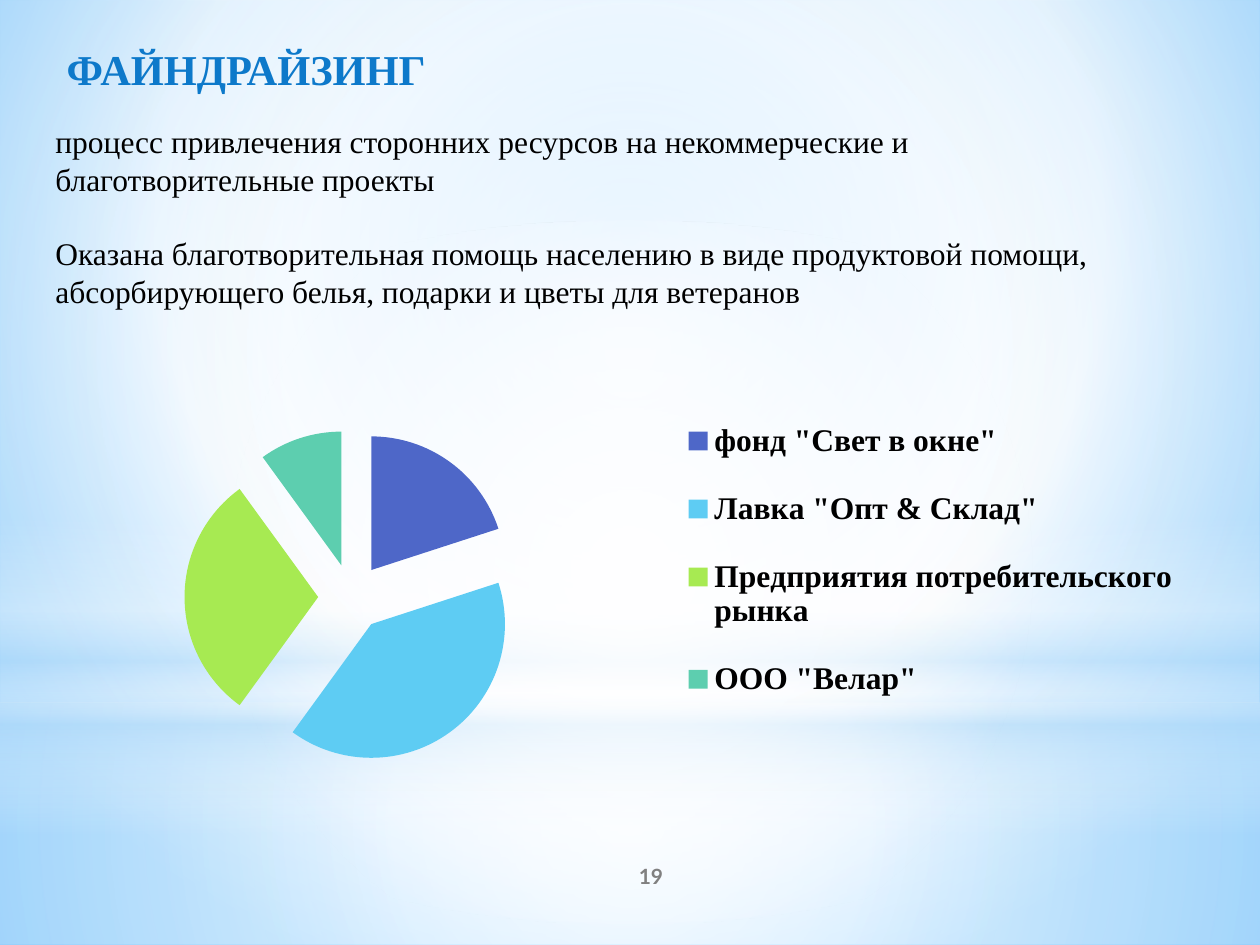
from dataclasses import dataclass
from typing import Optional

from lxml.etree import SubElement
from pptx import Presentation
from pptx.chart.data import CategoryChartData
from pptx.dml.color import RGBColor
from pptx.enum.chart import XL_CHART_TYPE, XL_LEGEND_POSITION
from pptx.enum.shapes import MSO_SHAPE
from pptx.enum.text import MSO_ANCHOR, MSO_AUTO_SIZE, PP_ALIGN
from pptx.oxml.ns import qn
from pptx.util import Pt

EMU_PER_PX = 914400 / 126
SERIF = "Times New Roman"
SANS = "Lato"


@dataclass(frozen=True)
class Box:
    left: int
    top: int
    width: int
    height: int

    def emu(self) -> list[int]:
        return [px(self.left), px(self.top), px(self.width), px(self.height)]


@dataclass(frozen=True)
class Stop:
    position: int
    color: str
    opacity: int = 100


@dataclass(frozen=True)
class Gradient:
    stops: list[Stop]
    focus: tuple[int, int, int, int] = (50, 50, 50, 50)
    angle: Optional[int] = None


@dataclass(frozen=True)
class Glow:
    kind: MSO_SHAPE
    box: Box
    gradient: Gradient


@dataclass(frozen=True)
class TextStyle:
    font: str
    size: float
    color: str
    bold: bool = False
    align: PP_ALIGN = PP_ALIGN.LEFT
    anchor: MSO_ANCHOR = MSO_ANCHOR.TOP
    gap: float = 0


@dataclass(frozen=True)
class Donor:
    name: str
    share: int
    color: str


SLIDE = Box(0, 0, 1260, 945)
CHART = Box(54, 319, 1134, 461)
PLOT = Box(73, 430, 557, 334)
LEGEND = Box(675, 390, 510, 340)
BACKGROUND = Gradient(
    [Stop(0, "9ED5FF"), Stop(60, "FFFFFF"), Stop(100, "5BB9FF")], (20, 10, 20, 60))
GLOWS = [
    Glow(MSO_SHAPE.RECTANGLE, Box(0, 703, 1260, 242), Gradient(
        [Stop(0, "FFFFFF", 91), Stop(37, "FFFFFF", 76), Stop(100, "B4DCFA", 79)])),
    Glow(MSO_SHAPE.RECTANGLE, Box(0, 0, 1260, 703), Gradient(
        [Stop(0, "FFFFFF", 89), Stop(48, "FFFFFF", 62), Stop(100, "B4DCFA", 79)])),
    Glow(MSO_SHAPE.RECTANGLE, Box(0, 519, 1260, 315), Gradient(
        [Stop(0, "FFFFFF", 0), Stop(29, "FFFFFF", 30), Stop(45, "B4DCFA", 40),
         Stop(55, "FFFFFF", 26), Stop(65, "B4DCFA", 60), Stop(100, "FFFFFF", 0)],
        angle=90)),
    Glow(MSO_SHAPE.OVAL, Box(0, 221, 1260, 703), Gradient(
        [Stop(0, "FFFFFF"), Stop(56, "FFFFFF", 0)])),
]
DONORS = [
    Donor('фонд "Свет в окне"', 20, "4E67C8"),
    Donor('Лавка "Опт & Склад"', 40, "5ECCF3"),
    Donor("Предприятия потребительского рынка", 30, "A7EA52"),
    Donor('ООО "Велар"', 10, "5DCEAF"),
]
BODY = [
    "процесс привлечения сторонних ресурсов на некоммерческие и "
    "благотворительные проекты",
    "Оказана благотворительная помощь населению в виде продуктовой помощи, "
    "абсорбирующего белья, подарки и цветы для ветеранов",
]


def px(length: int) -> int:
    """Turn pixels into EMU."""
    return round(length * EMU_PER_PX)


def rgb(color: str) -> RGBColor:
    """Turn a hex string into a colour."""
    return RGBColor.from_string(color)


def set_gradient(fill, properties, gradient: Gradient) -> None:
    """Give the owner of the properties element a gradient fill."""
    fill.solid()
    solid = properties.find(qn("a:solidFill"))
    element = solid.makeelement(qn("a:gradFill"), {"rotWithShape": "1"})
    stop_list = SubElement(element, qn("a:gsLst"))
    for stop in gradient.stops:
        item = SubElement(stop_list, qn("a:gs"), pos=str(stop.position * 1000))
        color = SubElement(item, qn("a:srgbClr"), val=stop.color)
        if stop.opacity < 100:
            SubElement(color, qn("a:alpha"), val=str(stop.opacity * 1000))
    if gradient.angle is not None:
        SubElement(element, qn("a:lin"), ang=str(gradient.angle * 60000), scaled="0")
    else:
        circle = SubElement(element, qn("a:path"), {"path": "circle"})
        sides = {side: str(value * 1000) for side, value in zip("ltrb", gradient.focus)}
        SubElement(circle, qn("a:fillToRect"), sides)
    properties.replace(solid, element)


def draw_glow(slide, glow: Glow) -> None:
    """Draw one soft shape of the backdrop."""
    shape = slide.shapes.add_shape(glow.kind, *glow.box.emu())
    shape.shadow.inherit = False
    shape.line.fill.background()
    set_gradient(shape.fill, shape.element.find(qn("p:spPr")), glow.gradient)


def write_text(shape, texts: list[str], style: TextStyle) -> None:
    """Fill a shape with one paragraph for each text."""
    frame = shape.text_frame
    frame.word_wrap = True
    frame.auto_size = MSO_AUTO_SIZE.NONE
    frame.vertical_anchor = style.anchor
    for index, text in enumerate(texts):
        paragraph = frame.add_paragraph() if index else frame.paragraphs[0]
        paragraph.alignment = style.align
        paragraph.space_before = Pt(style.gap if index else 0)
        run = paragraph.add_run()
        run.text = text
        run.font.name = style.font
        run.font.size = Pt(style.size)
        run.font.bold = style.bold
        run.font.color.rgb = rgb(style.color)


def set_layout(parent, index: int, box: Box, inner: bool = False) -> None:
    """Place a chart part at a fixed box inside the chart."""
    for old in parent.findall(qn("c:layout")):
        parent.remove(old)
    layout = parent.makeelement(qn("c:layout"), {})
    parent.insert(index, layout)
    manual = SubElement(layout, qn("c:manualLayout"))
    if inner:
        SubElement(manual, qn("c:layoutTarget"), val="inner")
    for mode in ("xMode", "yMode"):
        SubElement(manual, qn(f"c:{mode}"), val="edge")
    fractions = {
        "x": (box.left - CHART.left) / CHART.width,
        "y": (box.top - CHART.top) / CHART.height,
        "w": box.width / CHART.width,
        "h": box.height / CHART.height,
    }
    for name, value in fractions.items():
        SubElement(manual, qn(f"c:{name}"), val=f"{value:.3f}")


def draw_chart(slide, donors: list[Donor]) -> None:
    """Draw the exploded pie of donor shares."""
    data = CategoryChartData()
    data.categories = [donor.name for donor in donors]
    data.add_series("Series 1", [donor.share for donor in donors])
    chart = slide.shapes.add_chart(XL_CHART_TYPE.PIE_EXPLODED, *CHART.emu(), data).chart
    chart.has_title = False
    chart.font.name = SANS
    chart.font.size = Pt(18)
    chart.font.color.rgb = rgb("000000")
    plot = chart.plots[0]
    plot.vary_by_categories = True
    for index, donor in enumerate(donors):
        fill = plot.series[0].points[index].format.fill
        fill.solid()
        fill.fore_color.rgb = rgb(donor.color)
    chart.has_legend = True
    legend = chart.legend
    legend.position = XL_LEGEND_POSITION.RIGHT
    legend.include_in_layout = False
    legend.font.name = SERIF
    legend.font.size = Pt(18)
    legend.font.bold = True
    legend.font.color.rgb = rgb("000000")
    root = chart.element
    set_layout(root.find(".//" + qn("c:plotArea")), 0, PLOT, inner=True)
    set_layout(root.find(".//" + qn("c:legend")), 1, LEGEND)


def main() -> None:
    """Build the slide and save it."""
    presentation = Presentation()
    presentation.slide_width, presentation.slide_height = SLIDE.emu()[2:]
    slide = presentation.slides.add_slide(presentation.slide_layouts[5])
    fill = slide.background.fill
    fill.solid()
    set_gradient(fill, slide.element.find(".//" + qn("p:bgPr")), BACKGROUND)
    for glow in GLOWS:
        draw_glow(slide, glow)
    number = slide.shapes.add_textbox(*Box(525, 851, 252, 50).emu())
    write_text(number, ["19"], TextStyle(
        SANS, 12, "808080", True, PP_ALIGN.CENTER, MSO_ANCHOR.MIDDLE))
    title = slide.shapes.title
    title.left, title.top, title.width, title.height = Box(54, 37, 1032, 79).emu()
    title.element.getparent().append(title.element)
    write_text(title, ["ФАЙНДРАЙЗИНГ"], TextStyle(SERIF, 24.3, "0D79CA", True))
    draw_chart(slide, DONORS)
    body = slide.shapes.add_textbox(*Box(43, 116, 1121, 204).emu())
    write_text(body, BODY, TextStyle(SERIF, 18, "000000", gap=21))
    presentation.save("out.pptx")


if __name__ == "__main__":
    main()
